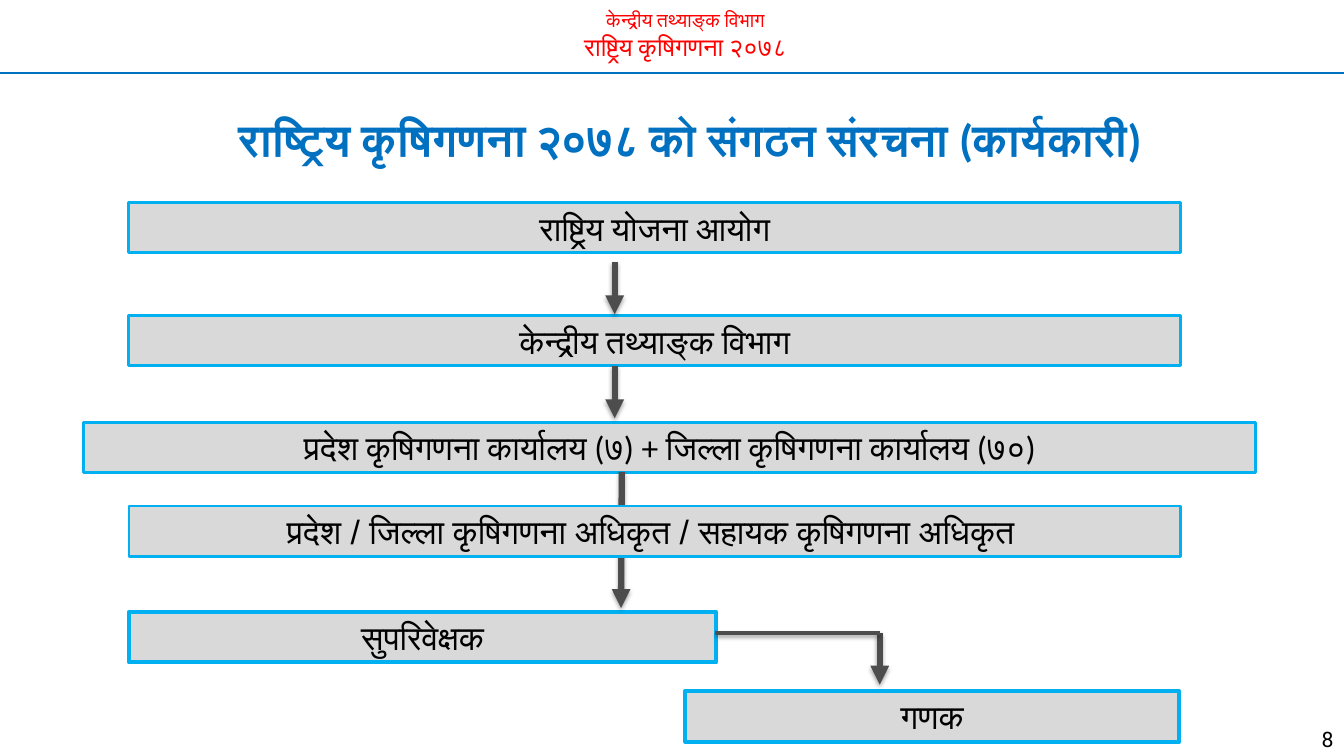
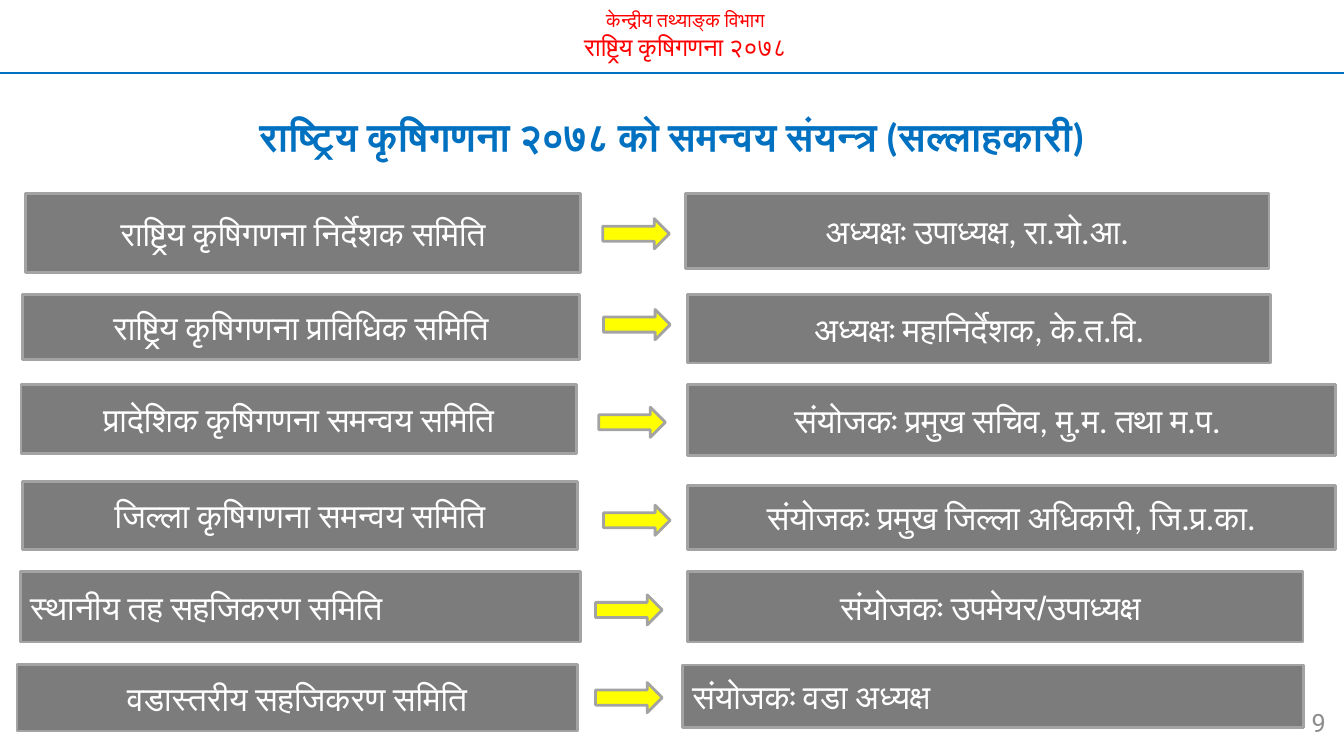
import pptx
import pptx.dml.color
import pptx.enum.shapes
import pptx.enum.text
import pptx.oxml
import pptx.oxml.ns
import pptx.util

Cm = pptx.util.Cm
Pt = pptx.util.Pt
RGBColor = pptx.dml.color.RGBColor
SHAPE = pptx.enum.shapes.MSO_SHAPE
ALIGN = pptx.enum.text.PP_ALIGN
ANCHOR = pptx.enum.text.MSO_ANCHOR

BLUE = RGBColor(0x00, 0x70, 0xC0)
SKY = RGBColor(0x00, 0xB0, 0xF0)
RED = RGBColor(0xFF, 0x00, 0x00)
YELLOW = RGBColor(0xFF, 0xFF, 0x00)
BLACK = RGBColor(0x00, 0x00, 0x00)
WHITE = RGBColor(0xFF, 0xFF, 0xFF)
CHARCOAL = RGBColor(0x4D, 0x4D, 0x4D)
GREY = RGBColor(0x7C, 0x7C, 0x7C)
MID_GREY = RGBColor(0x8C, 0x8C, 0x8C)
SILVER = RGBColor(0xA3, 0xA3, 0xA3)
PALE = RGBColor(0xD9, 0xD9, 0xD9)

WIDTH, HEIGHT = 33.87, 19.05
NS = pptx.oxml.ns.nsdecls("a")
NO_SHADOW = f"<a:effectLst {NS}/>"
SOFT_SHADOW = (
    f'<a:effectLst {NS}><a:outerShdw blurRad="39370" dist="22860" dir="5400000" '
    'rotWithShape="0"><a:srgbClr val="000000"><a:alpha val="35000"/></a:srgbClr>'
    "</a:outerShdw></a:effectLst>"
)


class Deck:
    """Holds the shared style and the slide being built."""

    def __init__(self):
        self.prs = pptx.Presentation()
        self.prs.slide_width, self.prs.slide_height = Cm(WIDTH), Cm(HEIGHT)
        self.s = None

    def slide(self, title, at, size):
        self.s = self.prs.slides.add_slide(self.prs.slide_layouts[5])
        sp = self.s.shapes.title
        sp.left, sp.top, sp.width, sp.height = map(Cm, at)
        tf = sp.text_frame
        tf.auto_size = pptx.enum.text.MSO_AUTO_SIZE.NONE
        tf.vertical_anchor = ANCHOR.TOP
        self.add_text(tf.paragraphs[0], title, size, BLUE, bold=True)
        tf.paragraphs[0].line_spacing = 1.5
        self.header()

    def header(self):
        tf = self.textbox(3.18, 0.08, 28.19, 1.63)
        self.add_text(tf.paragraphs[0], "केन्द्रीय तथ्याङ्क विभाग", 14, RED)
        self.add_text(tf.add_paragraph(), "राष्ट्रिय कृषिगणना २०७८", 18, RED)
        self.line(0, 1.85, WIDTH, 1.85, BLUE, 1.5, NO_SHADOW)

    def add_text(self, p, runs, size, color, align=ALIGN.CENTER, bold=False):
        p.alignment = align
        for text, font in [(runs, "Calibri")] if isinstance(runs, str) else runs:
            r = p.add_run()
            r.text = text
            r.font.name, r.font.size, r.font.bold = font, Pt(size), bold
            r.font.color.rgb = color
            cs = pptx.oxml.parse_xml(f'<a:cs {NS} typeface="{font}"/>')
            r.font._element.append(cs)

    def textbox(self, x, y, w, h):
        tf = self.s.shapes.add_textbox(Cm(x), Cm(y), Cm(w), Cm(h)).text_frame
        tf.word_wrap = True
        return tf

    def shape(self, kind, at, fill, line, weight):
        sp = self.s.shapes.add_shape(kind, *map(Cm, at))
        sp.shadow.inherit = False
        sp.fill.solid()
        sp.fill.fore_color.rgb = fill
        sp.line.color.rgb, sp.line.width = line, Pt(weight)
        return sp

    def box(self, at, runs, fill, line, weight, color, align=ALIGN.CENTER):
        tf = self.shape(SHAPE.RECTANGLE, at, fill, line, weight).text_frame
        tf.word_wrap = True
        tf.vertical_anchor = ANCHOR.MIDDLE
        self.add_text(tf.paragraphs[0], runs, 24, color, align)

    def level(self, x, y, w, runs, weight=2.25):
        self.box((x, y, w, 1.27), runs, PALE, SKY, weight, BLACK)

    def committee(self, at, text, align=ALIGN.CENTER):
        self.box(at, text, GREY, SILVER, 2, WHITE, align)

    def block_arrow(self, x, y):
        self.shape(SHAPE.RIGHT_ARROW, (x, y, 1.68, 0.76), YELLOW, SILVER, 2)

    def line(self, x1, y1, x2, y2, color=CHARCOAL, weight=3, effect=SOFT_SHADOW):
        c = self.s.shapes.add_connector(
            pptx.enum.shapes.MSO_CONNECTOR.STRAIGHT, Cm(x1), Cm(y1), Cm(x2), Cm(y2))
        c.line.color.rgb, c.line.width = color, Pt(weight)
        c._element.spPr.append(pptx.oxml.parse_xml(effect))
        return c

    def arrow(self, x1, y1, x2, y2):
        ln = self.line(x1, y1, x2, y2, weight=4.5).get_or_add_ln()
        ln.append(pptx.oxml.parse_xml(f'<a:tailEnd {NS} type="triangle"/>'))

    def number(self, text, at, size, color, spacing=1.0, anchor=ANCHOR.TOP):
        tf = self.textbox(*at)
        tf.vertical_anchor = anchor
        self.add_text(tf.paragraphs[0], [(text, "Roboto")], size, color, ALIGN.RIGHT)
        tf.paragraphs[0].line_spacing = spacing


def structure(deck):
    deck.slide("राष्ट्रिय कृषिगणना २०७८ को संगठन संरचना (कार्यकारी)",
               (4.11, 2.01, 26.57, 2.21), 32)
    deck.level(3.25, 5.1, 26.5, "राष्ट्रिय योजना आयोग")
    deck.level(3.25, 7.95, 26.5, "केन्द्रीय तथ्याङ्क विभाग")
    deck.level(2.11, 10.64, 29.54,
               "प्रदेश कृषिगणना कार्यालय (७) + जिल्ला कृषिगणना कार्यालय (७०)")
    deck.level(3.25, 15.42, 14.8, "सुपरिवेक्षक", 3)
    deck.level(17.27, 17.42, 12.45, "गणक", 3)
    for ends in [(15.49, 6.6, 15.49, 7.92), (15.49, 9.22, 15.49, 10.54),
                 (15.67, 11.89, 15.65, 15.32), (22.17, 15.95, 22.17, 17.25)]:
        deck.arrow(*ends)
    deck.line(18.03, 15.95, 22.17, 15.95)
    deck.level(3.25, 12.75, 26.5, [
        ("प्रदेश / जिल्ला", "Arial"), (" कृषिगणना अधिकृत", "Roboto"),
        (" / ", "Arial"), ("सहायक कृषिगणना अधिकृत ", "Roboto")], 2)
    deck.number("8", (31.65, 17.86, 2.21, 0.89), 15.2, BLACK, 1.5)


def coordination(deck):
    deck.slide("राष्ट्रिय कृषिगणना २०७८ को समन्वय संयन्त्र (सल्लाहकारी)",
               (0, 2.11, WIDTH, 1.85), 28)
    names = [
        ("राष्ट्रिय कृषिगणना निर्देशक समिति", "अध्यक्षः उपाध्यक्ष, रा.यो.आ."),
        ("राष्ट्रिय कृषिगणना प्राविधिक समिति", "अध्यक्षः महानिर्देशक, के.त.वि."),
        ("प्रादेशिक कृषिगणना समन्वय समिति", "संयोजकः प्रमुख सचिव, मु.म. तथा म.प. "),
        ("जिल्ला कृषिगणना समन्वय समिति", "संयोजकः प्रमुख जिल्ला अधिकारी, जि.प्र.का."),
        ("स्थानीय तह सहजिकरण समिति",
         [("संयोजकः ", "Calibri"), ("उपमेयर/उपाध्यक्ष ", "Arial")]),
        ("वडास्तरीय सहजिकरण समिति", "संयोजकः वडा अध्यक्ष"),
    ]
    places = [
        ((0.64, 4.88, 14, 1.98), (15.19, 5.51), (17.27, 4.88, 14.71, 1.88)),
        ((0.56, 7.42, 14.05, 1.65), (15.21, 7.8), (17.32, 7.42, 14.71, 1.73)),
        ((0.53, 9.68, 14, 1.75), (15.09, 10.26), (17.32, 9.7, 16.33, 1.78)),
        ((0.56, 12.14, 14, 1.7), (15.21, 12.73), (17.32, 12.24, 16.33, 1.6)),
        ((0.51, 14.4, 14.12, 1.78), (15.01, 14.99), (17.32, 14.4, 15.52, 1.78)),
        ((0.43, 16.74, 14.12, 1.68), (15.01, 17.2), (17.2, 16.76, 15.65, 1.57)),
    ]
    left_aligned = {"स्थानीय तह सहजिकरण समिति", "संयोजकः वडा अध्यक्ष"}
    for (committee, head), (left, arrow, right) in zip(names, places):
        for at, text in ((left, committee), (right, head)):
            is_left = isinstance(text, str) and text in left_aligned
            deck.committee(at, text, ALIGN.LEFT if is_left else ALIGN.CENTER)
        deck.block_arrow(*arrow)
    deck.number("9", (31.75, 17.58, 1.91, 1.27), 18, MID_GREY, anchor=ANCHOR.MIDDLE)


def main():
    deck = Deck()
    structure(deck)
    coordination(deck)
    deck.prs.save("out.pptx")


if __name__ == "__main__":
    main()
